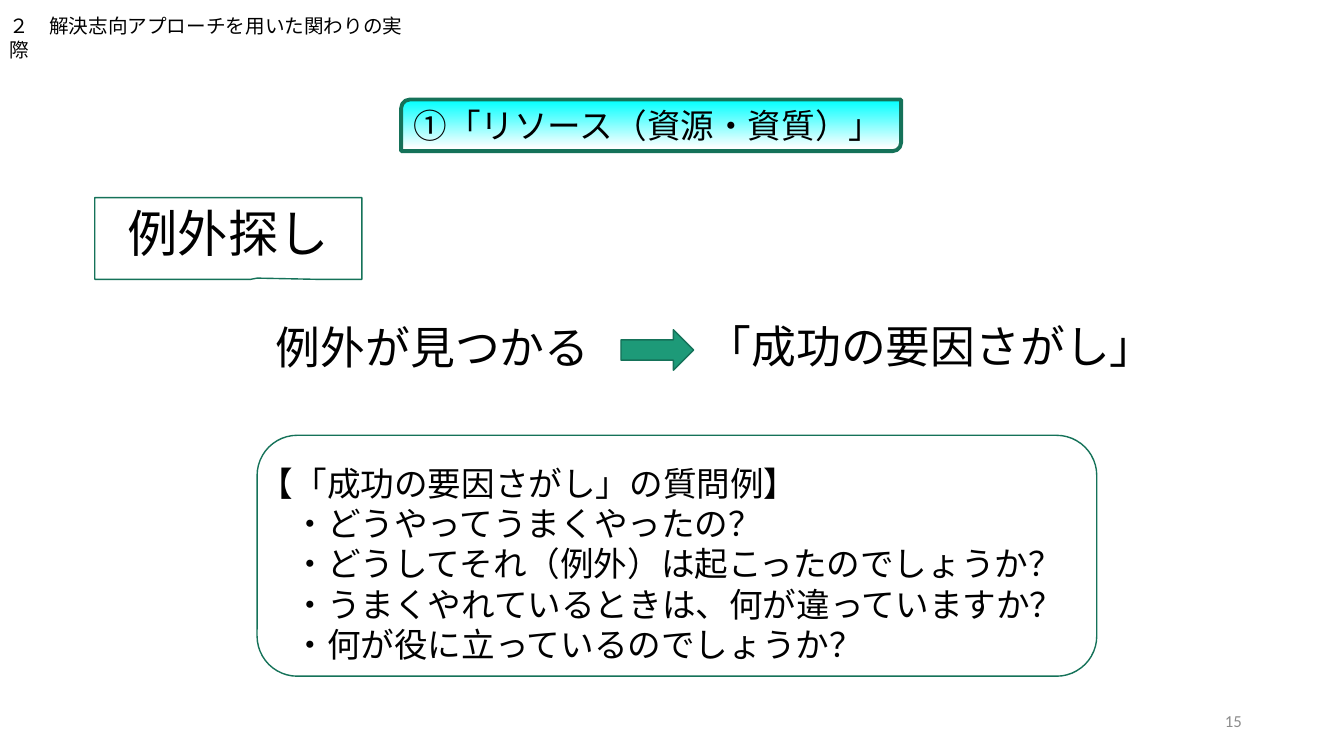
from lxml import etree
from pptx import Presentation
from pptx.dml.color import RGBColor
from pptx.enum.shapes import MSO_SHAPE
from pptx.enum.text import MSO_ANCHOR, PP_ALIGN
from pptx.oxml.ns import qn
from pptx.util import Cm, Pt

CALLOUT = MSO_SHAPE.RECTANGULAR_CALLOUT
BANNER = MSO_SHAPE.ROUND_2_DIAG_RECTANGLE
ARROW = MSO_SHAPE.RIGHT_ARROW
FRAME = MSO_SHAPE.ROUNDED_RECTANGLE
TOP, MIDDLE = MSO_ANCHOR.TOP, MSO_ANCHOR.MIDDLE
LEFT, CENTER, RIGHT = PP_ALIGN.LEFT, PP_ALIGN.CENTER, PP_ALIGN.RIGHT

COLORS = {
    "text": "000000",
    "number": "8C8C8C",
    "outline": "157259",
    "arrow": "1D9A78",
    "cyan": "00FFFF",
    "white": "FFFFFF",
}
LATIN, JAPANESE = "Calibri", "Noto Sans CJK JP"
CALLOUT_TAIL = (0.108, 0.485)

QUESTIONS = (
    "【「成功の要因さがし」の質問例】",
    "　・どうやってうまくやったの？",
    "　・どうしてそれ（例外）は起こったのでしょうか？",
    "　・うまくやれているときは、何が違っていますか？",
    "　・何が役に立っているのでしょうか？",
)


def color(name):
    return RGBColor.from_string(COLORS[name])


def write(shape, lines, size, font=JAPANESE, tint="text", align=LEFT, anchor=TOP):
    frame = shape.text_frame
    frame.word_wrap = True
    frame.vertical_anchor = anchor
    for index, line in enumerate(lines):
        paragraph = frame.add_paragraph() if index else frame.paragraphs[0]
        paragraph.alignment = align
        span = paragraph.add_run()
        span.text = line
        for name, value in {"size": Pt(size), "name": font}.items():
            setattr(span.font, name, value)
        span.font.color.rgb = color(tint)
        if font == JAPANESE:
            east_asian = etree.SubElement(span.font._element, qn("a:ea"))
            east_asian.set("typeface", font)


def add_text(page, area, lines, size, **text_format):
    box = page.shapes.add_textbox(*map(Cm, area))
    write(box, lines, size, **text_format)


def add_figure(page, kind, area, fill=None, line_width=None, adjustments=()):
    shape = page.shapes.add_shape(kind, *map(Cm, area))
    shape.shadow.inherit = False
    for index, value in enumerate(adjustments):
        shape.adjustments[index] = value
    if fill:
        shape.fill.solid()
        shape.fill.fore_color.rgb = color(fill)
    else:
        shape.fill.background()
    if line_width:
        shape.line.color.rgb = color("outline")
        shape.line.width = Pt(line_width)
    else:
        shape.line.fill.background()
    return shape


def add_callout(page, area, text, size, line_width=None):
    callout = add_figure(page, CALLOUT, area, line_width=line_width,
                         adjustments=CALLOUT_TAIL)
    write(callout, [text], size, align=CENTER)


def add_banner(page, area, text):
    banner = add_figure(page, BANNER, area, line_width=2.75)
    banner.fill.gradient()
    banner.fill.gradient_angle = 270
    stops = ((0, "cyan"), (0.94, "white"))
    for stop, (position, tint) in zip(banner.fill.gradient_stops, stops):
        stop.position = position
        stop.color.rgb = color(tint)
    write(banner, [text], 24, anchor=MIDDLE)


def main():
    deck = Presentation()
    deck.slide_width, deck.slide_height = Cm(33.87), Cm(19.05)
    page = deck.slides.add_slide(deck.slide_layouts[6])

    add_text(page, (23.93, 17.65, 7.62, 1.02), ["15"], 12, font=LATIN,
             tint="number", align=RIGHT, anchor=MIDDLE)
    add_callout(page, (2.39, 4.98, 6.73, 2.06), "例外探し", 36, line_width=1)
    add_text(page, (0, 0.23, 10.9, 0.86),
             ["２　解決志向アプローチを用いた関わりの実際"], 14, font=LATIN)
    add_banner(page, (10.11, 2.51, 12.6, 1.3), "①「リソース（資源・資質）」")
    add_callout(page, (6.48, 7.92, 8.86, 1.52), "例外が見つかる", 32)
    add_figure(page, ARROW, (15.65, 8.31, 1.83, 1.02), fill="arrow", line_width=1)
    add_callout(page, (17.48, 7.9, 11.96, 1.52), "「成功の要因さがし」", 32)
    add_text(page, (6.3, 11.53, 21.16, 5.38), QUESTIONS, 24)
    add_figure(page, FRAME, (6.48, 10.97, 21.16, 6.07), line_width=1)

    deck.save("out.pptx")


if __name__ == "__main__":
    main()
